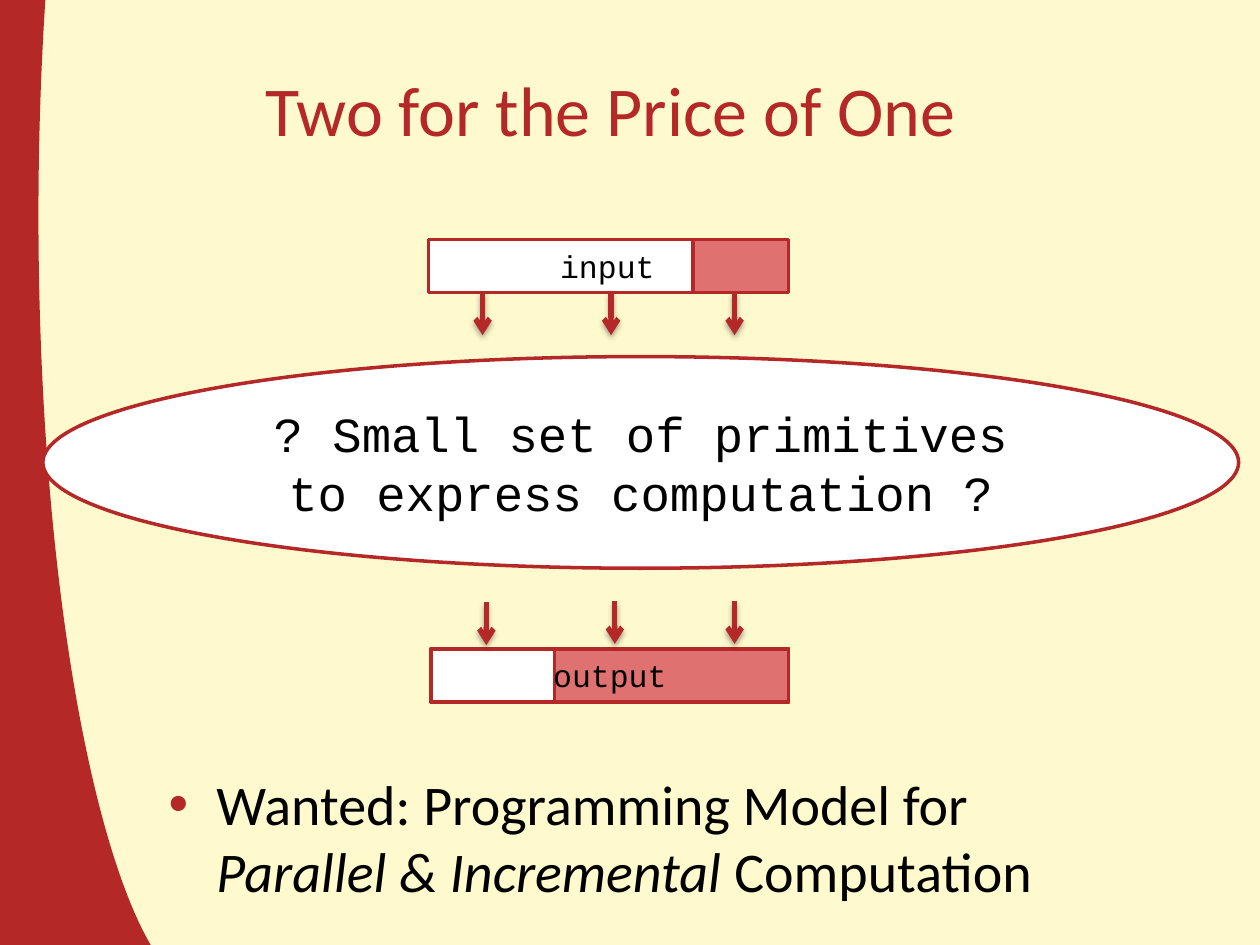
from lxml import etree
from pptx import Presentation
from pptx.dml.color import RGBColor
from pptx.enum.shapes import MSO_CONNECTOR as CONN, MSO_SHAPE as SHAPE
from pptx.enum.text import MSO_ANCHOR as ANCHOR, PP_ALIGN as ALIGN
from pptx.oxml import parse_xml
from pptx.oxml.ns import nsdecls, qn
from pptx.util import Inches, Pt

RED = RGBColor(0xB4, 0x28, 0x28)
PINK = RGBColor(0xDF, 0x71, 0x71)
CREAM = RGBColor(0xFF, 0xFA, 0xCD)
WHITE = RGBColor(0xFF, 0xFF, 0xFF)
BLACK = RGBColor(0, 0, 0)

SHADOW = f"""<a:effectLst {nsdecls('a')}>
  <a:outerShdw blurRad="{Pt(3.1)}" dist="{Pt(1.8)}" dir="5400000" rotWithShape="0">
    <a:srgbClr val="000000"><a:alpha val="35000"/></a:srgbClr>
  </a:outerShdw>
</a:effectLst>"""


def add_run(para, text, size, font, color=BLACK):
    run = para.add_run()
    run.text = text
    run.font.size = Pt(size)
    run.font.name = font
    run.font.color.rgb = color
    return run


def add_box(kind, left, top, width, height, fill=None, text="", size=18, line=2):
    box = slide.shapes.add_shape(
        kind, Inches(left), Inches(top), Inches(width), Inches(height))
    box.shadow.inherit = False
    if fill is None:
        box.fill.background()
    else:
        box.fill.solid()
        box.fill.fore_color.rgb = fill
    box.line.color.rgb = RED
    box.line.width = Pt(line)
    if text:
        frame = box.text_frame
        frame.word_wrap = True
        frame.vertical_anchor = ANCHOR.MIDDLE
        para = frame.paragraphs[0]
        para.alignment = ALIGN.CENTER
        add_run(para, text, size, "Courier New")
    return box


prs = Presentation()
prs.slide_width, prs.slide_height = Inches(10), Inches(7.5)
slide = prs.slides.add_slide(prs.slide_layouts[5])

# Background and curved red edge
slide.background.fill.solid()
slide.background.fill.fore_color.rgb = CREAM
edge = add_box(SHAPE.ARC, -0.25, -4.83, 3.08, 13.08, line=80)
edge.adjustments[0] = 177.67
edge.adjustments[1] = 55.34
edge.element.spPr.xfrm.set("flipH", "1")

# Title
title = slide.shapes.title
title.left, title.top = Inches(1.45), Inches(0)
title.width, title.height = Inches(6.79), Inches(1.72)
title.text_frame.vertical_anchor = ANCHOR.MIDDLE
para = title.text_frame.paragraphs[0]
para.alignment = ALIGN.CENTER
add_run(para, "Two for the Price of One", 40, "Calibri", RED)

# Bullet
note = slide.shapes.add_textbox(Inches(1.24), Inches(6.06), Inches(8.36), Inches(1.45))
note.text_frame.word_wrap = True
para = note.text_frame.paragraphs[0]
para.space_before = Pt(6.4)
props = para._p.get_or_add_pPr()
props.set("marL", str(Inches(0.38)))
props.set("indent", str(-Inches(0.38)))
color = etree.SubElement(props, qn("a:buClr"))
etree.SubElement(color, qn("a:srgbClr")).set("val", str(RED))
etree.SubElement(props, qn("a:buFont")).set("typeface", "Arial")
etree.SubElement(props, qn("a:buChar")).set("char", "•")
add_run(para, "Wanted: Programming Model for ", 32, "Calibri")
para.add_line_break()
add_run(para, "Parallel & Incremental", 32, "Calibri").font.italic = True
add_run(para, " Computation", 32, "Calibri")

# Input and output bars, the changed parts in pink
add_box(SHAPE.RECTANGLE, 3.4, 1.9, 2.84, 0.42, WHITE, "input")
add_box(SHAPE.RECTANGLE, 5.5, 1.9, 0.76, 0.42, PINK)
add_box(SHAPE.RECTANGLE, 3.42, 5.15, 2.84, 0.42, WHITE)
add_box(SHAPE.RECTANGLE, 4.4, 5.15, 1.86, 0.42, PINK)
add_box(SHAPE.RECTANGLE, 3.42, 5.15, 2.84, 0.42, None, "output")

# Arrows into and out of the computation
for x, y in [(3.83, 2.32), (4.85, 2.32), (5.83, 2.32),
             (3.86, 4.78), (4.88, 4.77), (5.83, 4.77)]:
    arrow = slide.shapes.add_connector(
        CONN.STRAIGHT, Inches(x), Inches(y), Inches(x), Inches(y + 0.34))
    arrow.line.color.rgb = RED
    arrow.line.width = Pt(3)
    tail = etree.SubElement(arrow.line._get_or_add_ln(), qn("a:tailEnd"))
    tail.set("type", "arrow")
    arrow.element.spPr.append(parse_xml(SHADOW))

# Computation
add_box(SHAPE.OVAL, 0.34, 2.83, 9.49, 1.68, WHITE,
        "? Small set of primitives to express computation ?", 28)

prs.save("out.pptx")
